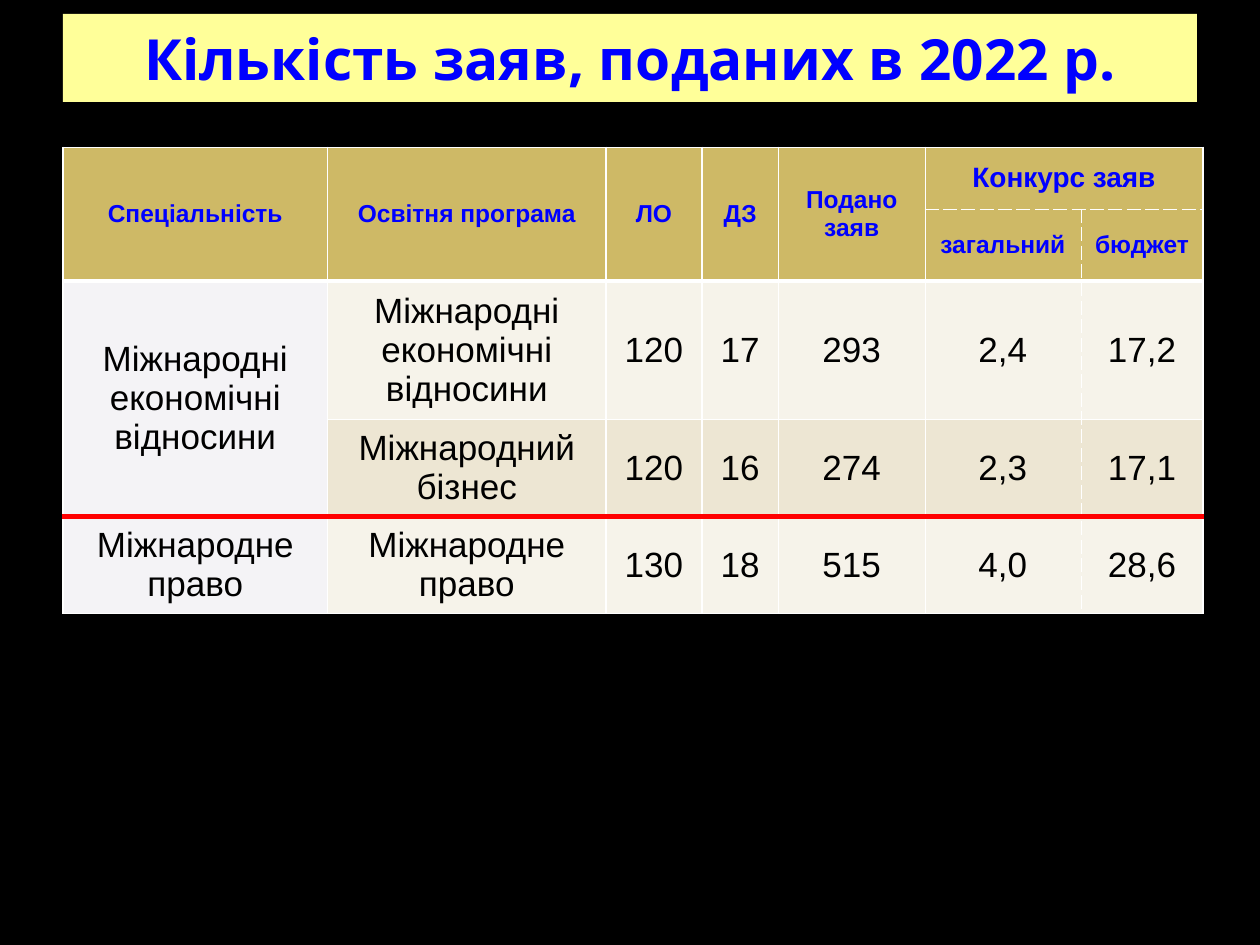
from lxml.etree import SubElement
from pptx import Presentation
from pptx.dml.color import RGBColor
from pptx.enum.shapes import MSO_SHAPE
from pptx.enum.text import MSO_ANCHOR, PP_ALIGN
from pptx.oxml.ns import qn
from pptx.util import Inches, Pt

COLORS = {
    "background": "000000",
    "title_fill": "FFFF99",
    "heading": "0000FF",
    "body": "000000",
    "header_fill": "CEB966",
    "specialty_fill": "F4F3F6",
    "light_band": "F6F3EA",
    "dark_band": "EDE6D3",
    "grid": "FFFFFF",
    "divider": "FF0000",
}

COLUMN_WIDTHS = [2.1, 2.21, 0.76, 0.61, 1.16, 1.24, 0.97]
ROW_HEIGHTS = [0.49, 0.57, 1.1, 0.77, 0.77]
HEADER_ROWS = 2

# None marks a place covered by a merged cell
ROWS = [
    ["Спеціальність", "Освітня програма", "ЛО", "ДЗ", "Подано заяв", "Конкурс заяв", None],
    [None, None, None, None, None, "загальний", "бюджет"],
    ["Міжнародні економічні відносини", "Міжнародні економічні відносини",
     "120", "17", "293", "2,4", "17,2"],
    [None, "Міжнародний бізнес", "120", "16", "274", "2,3", "17,1"],
    ["Міжнародне право", "Міжнародне право", "130", "18", "515", "4,0", "28,6"],
]
# Top left row and column, then bottom right row and column
MERGES = [(0, column, 1, column) for column in range(5)] + [(0, 5, 0, 6), (2, 0, 3, 0)]

# Every grid line: colour, width in points, dash
PLAIN = ("grid", 1, "solid")
THIN = ("grid", 0.25, "solid")
DASHED = ("grid", 0.25, "dash")
HEAVY = ("grid", 3, "solid")
DIVIDER = ("divider", 3, "solid")
HORIZONTAL_LINES = [PLAIN, DASHED, HEAVY, PLAIN, DIVIDER, PLAIN]
VERTICAL_LINES = [PLAIN, PLAIN, PLAIN, PLAIN, PLAIN, THIN, DASHED, PLAIN]


def rgb(name):
    return RGBColor.from_string(COLORS[name])


def set_fill(target, color):
    target.fill.solid()
    target.fill.fore_color.rgb = rgb(color)


def write_text(text_frame, text, size, color, bold, font_name="Arial"):
    paragraph = text_frame.paragraphs[0]
    paragraph.alignment = PP_ALIGN.CENTER
    run = paragraph.add_run()
    run.text = text
    run.font.name = font_name
    run.font.size = Pt(size)
    run.font.bold = bold
    run.font.color.rgb = rgb(color)


def add_title(slide, text):
    shape = slide.shapes.add_shape(
        MSO_SHAPE.RECTANGLE, Inches(0.5), Inches(0.11), Inches(9), Inches(0.7))
    shape.shadow.inherit = False
    set_fill(shape, "title_fill")
    shape.line.fill.background()
    shape.text_frame.word_wrap = True
    shape.text_frame.vertical_anchor = MSO_ANCHOR.MIDDLE
    write_text(shape.text_frame, text, 32.4, "heading", True, "Noto Sans")


def add_border(cell, side, line):
    color, width, dash = line
    border = SubElement(cell._tc.get_or_add_tcPr(), qn(f"a:ln{side}"), w=str(Pt(width)))
    fill = SubElement(border, qn("a:solidFill"))
    SubElement(fill, qn("a:srgbClr"), val=COLORS[color])
    SubElement(border, qn("a:prstDash"), val=dash)


def fill_name(row, column):
    if row < HEADER_ROWS:
        return "header_fill"
    if column == 0:
        return "specialty_fill"
    return "dark_band" if row == 3 else "light_band"


def format_cell(table, row, column):
    """Draw the outer borders of a cell or merged block, then fill it."""
    top, left, bottom, right = next(
        (m for m in MERGES if m[0] <= row <= m[2] and m[1] <= column <= m[3]),
        (row, column, row, column))
    cell = table.cell(row, column)
    if column == left:
        add_border(cell, "L", VERTICAL_LINES[column])
    if column == right:
        add_border(cell, "R", VERTICAL_LINES[column + 1])
    if row == top:
        add_border(cell, "T", HORIZONTAL_LINES[row])
    if row == bottom:
        add_border(cell, "B", HORIZONTAL_LINES[row + 1])
    set_fill(cell, fill_name(row, column))
    cell.vertical_anchor = MSO_ANCHOR.MIDDLE


def write_cell(cell, row, text):
    if row >= HEADER_ROWS:
        write_text(cell.text_frame, text, 20, "body", False)
    else:
        size = 16 if cell.is_merge_origin and cell.span_width > 1 else 14
        write_text(cell.text_frame, text, size, "heading", True)


def add_applications_table(slide):
    table = slide.shapes.add_table(
        len(ROW_HEIGHTS), len(COLUMN_WIDTHS), Inches(0.5), Inches(1.17),
        Inches(sum(COLUMN_WIDTHS)), Inches(sum(ROW_HEIGHTS))).table
    for column, width in zip(table.columns, COLUMN_WIDTHS):
        column.width = Inches(width)
    for row, height in zip(table.rows, ROW_HEIGHTS):
        row.height = Inches(height)
    for top, left, bottom, right in MERGES:
        table.cell(top, left).merge(table.cell(bottom, right))
    for row, texts in enumerate(ROWS):
        for column, text in enumerate(texts):
            format_cell(table, row, column)
            if text is not None:
                write_cell(table.cell(row, column), row, text)


def main():
    presentation = Presentation()
    presentation.slide_width = Inches(10)
    presentation.slide_height = Inches(7.5)
    slide = presentation.slides.add_slide(presentation.slide_layouts[6])
    set_fill(slide.background, "background")
    add_title(slide, "Кількість заяв, поданих в 2022 р.")
    add_applications_table(slide)
    presentation.save("out.pptx")


if __name__ == "__main__":
    main()
